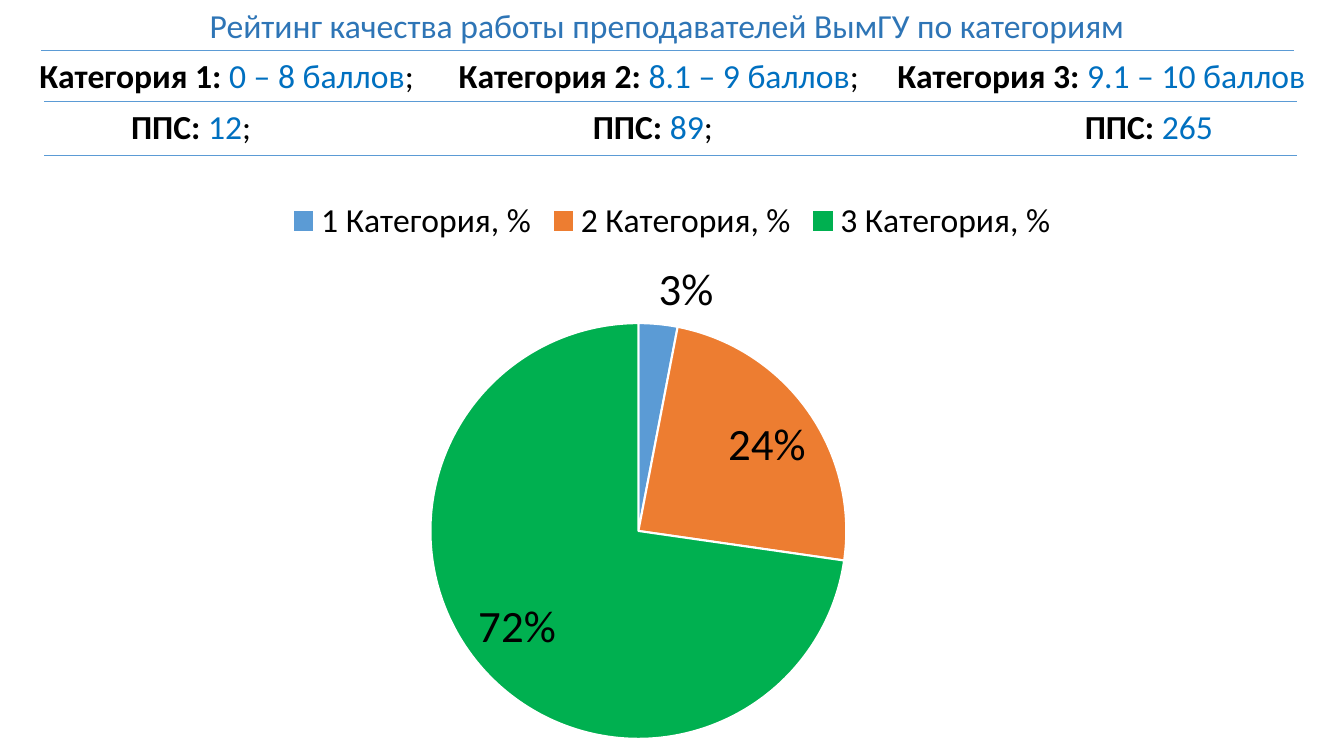
from lxml import etree
from pptx import Presentation
from pptx.chart.data import CategoryChartData
from pptx.dml.color import RGBColor
from pptx.enum import chart as ch, shapes, text
from pptx.oxml import parse_xml
from pptx.oxml.ns import nsdecls, qn
from pptx.util import Inches, Pt

BLACK, BLUE, RULE_BLUE = "000000", "0070C0", "5B9BD5"


def style(font, size, color):
    font.name = "Calibri"
    font.size = Pt(size)
    font.color.rgb = RGBColor.from_string(color)


prs = Presentation()
prs.slide_width, prs.slide_height = Inches(13.33), Inches(7.5)
slide = prs.slides.add_slide(prs.slide_layouts[5])

title = slide.shapes.title
title.left, title.top = Inches(1.96), Inches(0)
title.width, title.height = Inches(9.31), Inches(0.5)
title.text_frame.text = "Рейтинг качества работы преподавателей ВымГУ по категориям"
title.text_frame.word_wrap = False
title.text_frame.auto_size = text.MSO_AUTO_SIZE.NONE
title.text_frame.vertical_anchor = text.MSO_ANCHOR.MIDDLE
style(title.text_frame.paragraphs[0].font, 24, "2E75B6")

# Each row: top, left edges of its three columns, (label, value, ending)
rows = [
    (0.5, (0.39, 4.55, 8.9), [("Категория 1: ", "0 – 8 баллов", ";"),
                              ("Категория 2: ", "8.1 – 9 баллов", ";"),
                              ("Категория 3: ", "9.1 – 10 баллов", "")]),
    (1, (1.3, 5.88, 10.76), [("ППС: ", "12", ";"),
                             ("ППС: ", "89", ";"),
                             ("ППС: ", "265", "")]),
]
for top, columns, entries in rows:
    row = slide.shapes.add_textbox(0, Inches(top), Inches(13.33), Inches(0.5))
    row.text_frame.word_wrap = True
    row.text_frame.margin_left = Inches(columns[0])
    paragraph = row.text_frame.paragraphs[0]
    tab_stops = etree.SubElement(paragraph._p.get_or_add_pPr(), qn("a:tabLst"))
    for column in columns[1:]:
        etree.SubElement(tab_stops, qn("a:tab"), algn="l",
                         pos=str(Inches(column - columns[0])))
    style(paragraph.font, 24, BLACK)
    for index, (label, value, ending) in enumerate(entries):
        separator = ending + "\t" if index < len(entries) - 1 else ending
        for words, color, bold in ((label, BLACK, True), (value, BLUE, False),
                                   (separator, BLACK, False)):
            if words:
                run = paragraph.add_run()
                run.text = words
                run.font.bold = bold
                style(run.font, 24, color)

for left, y in ((0.41, 0.5), (0.44, 1.01), (0.44, 1.54)):
    rule = slide.shapes.add_connector(shapes.MSO_CONNECTOR.STRAIGHT, Inches(left),
                                      Inches(y), Inches(left + 12.42), Inches(y))
    rule.line.color.rgb = RGBColor.from_string(RULE_BLUE)
    rule.line.width = Pt(0.5)
    etree.SubElement(rule._element.spPr, qn("a:effectLst"))

ratings = CategoryChartData(number_format='0"%"')
ratings.categories = [f"{number} Категория, %" for number in (1, 2, 3)]
ratings.add_series("Series 1", (3, 24, 72))
pie = slide.shapes.add_chart(ch.XL_CHART_TYPE.PIE, 0, Inches(1.85), Inches(13.33),
                             Inches(5.65), ratings).chart
style(pie.font, 10, BLACK)
pie.has_title = False
pie.has_legend = True
pie.legend.position = ch.XL_LEGEND_POSITION.TOP
pie.legend.include_in_layout = False
style(pie.legend.font, 24, BLACK)

plot = pie.plots[0]
plot.vary_by_categories = True
series = plot.series[0]
for index, color in enumerate(("5B9BD5", "ED7D31", "00B050")):
    slice_format = series.points[index].format
    slice_format.fill.solid()
    slice_format.fill.fore_color.rgb = RGBColor.from_string(color)
    slice_format.line.color.rgb = RGBColor.from_string("FFFFFF")
    slice_format.line.width = Pt(1.5)

labels = series.data_labels
labels.show_value = True
labels.number_format = '0"%"'
labels.number_format_is_linked = False
labels.position = ch.XL_LABEL_POSITION.BEST_FIT
style(labels.font, 32, BLACK)

# Fixed place of the pie, as fractions of the chart
plot_area = pie._chartSpace.chart.plotArea
for layout in plot_area.findall(qn("c:layout")):
    plot_area.remove(layout)
plot_area.insert(0, parse_xml(
    f'<c:layout {nsdecls("c")}><c:manualLayout><c:layoutTarget val="inner"/>'
    '<c:xMode val="edge"/><c:yMode val="edge"/><c:x val="0.32"/><c:y val="0.24"/>'
    '<c:w val="0.31"/><c:h val="0.73"/></c:manualLayout></c:layout>'))

prs.save("out.pptx")
